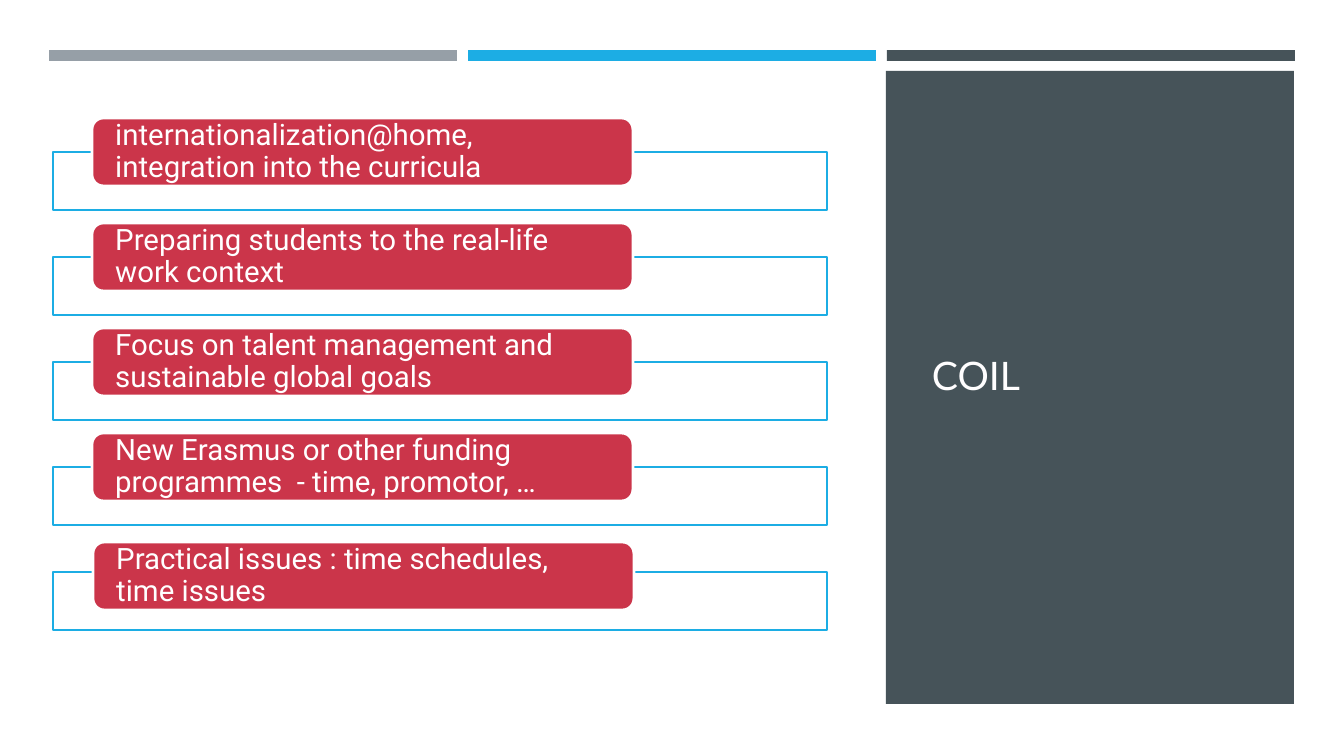
from pptx import Presentation
from pptx import util as u
from pptx.dml.color import RGBColor
from pptx.enum import shapes, text
from pptx.oxml import xmlchemy
from lxml import etree

PX = u.Inches(13.3333) / 1344
THEME = {
    "white": "FFFFFF", "title_white": "FFFEFF", "slate": "465359",
    "grey": "969FA7", "blue": "1CADE4", "red": "CB354A",
    "title": ("Lato", 28), "body": ("Roboto", 21),
}
KIND = shapes.MSO_SHAPE


def add_block(kind, box, fill, line=None, width=0):
    """Draw a filled shape; box is left, top, width, height in px."""
    block = page.shapes.add_shape(kind, *[round(n * PX) for n in box])
    block.shadow.inherit = False
    block.fill.solid()
    block.fill.fore_color.rgb = RGBColor.from_string(THEME[fill])
    if line:
        block.line.color.rgb = RGBColor.from_string(THEME[line])
        block.line.width = u.Pt(width)
    else:
        block.line.fill.background()
    return block


def write(shape, words, style, color, inset_x, inset_y, spacing):
    frame = shape.text_frame
    layout = {
        "word_wrap": True, "vertical_anchor": text.MSO_ANCHOR.MIDDLE,
        "margin_left": round(inset_x * PX), "margin_right": round(inset_x * PX),
        "margin_top": round(inset_y * PX), "margin_bottom": round(inset_y * PX),
    }
    for name, value in layout.items():
        setattr(frame, name, value)
    para = frame.paragraphs[0]
    para.alignment = text.PP_ALIGN.LEFT
    para.line_spacing = spacing
    span = para.add_run()
    span.text = words
    family, size = THEME[style]
    span.font.name, span.font.size = family, u.Pt(size)
    span.font.color.rgb = RGBColor.from_string(THEME[color])


deck = Presentation()
deck.slide_width, deck.slide_height = round(1344 * PX), round(756 * PX)
page = deck.slides.add_slide(deck.slide_layouts[6])

# Header bars and title panel
for column, color in enumerate(["grey", "blue", "slate"]):
    add_block(KIND.RECTANGLE, (49 + 419 * column, 50, 408, 11), color)
add_block(KIND.RECTANGLE, (886, 71, 408, 633), "slate")
title = page.shapes.add_textbox(*[round(n * PX) for n in (922, 115, 332, 519)])
write(title, "COIL", "title", "title_white", 10, 5, 1.0)

# Topics: an outlined frame with a red label over its top edge
topics = [
    "internationalization@home, integration into the curricula",
    "Preparing students to the real-life work context",
    "Focus on talent management and sustainable global goals",
    "New Erasmus or other funding programmes  - time, promotor, …",
    "Practical issues : time schedules, time issues",
]
PITCH = 105
for row, topic in enumerate(topics):
    frame = add_block(KIND.RECTANGLE, (53, 152 + PITCH * row, 774, 58),
                      "white", "blue", 1.75)
    tint = frame.fill.fore_color._xFill.find(".//{*}srgbClr")
    etree.SubElement(tint, tint.tag.replace("srgbClr", "alpha"), val="90000")

    # The last label sits slightly lower and to the right
    dx, dy = (1, 4) if topic == topics[-1] else (0, 0)
    label = add_block(KIND.ROUNDED_RECTANGLE,
                      (92 + dx, 118 + PITCH * row + dy, 541, 68),
                      "red", "white", 2)
    write(label, topic, "body", "white", 20, 0, 0.9)

deck.save("out.pptx")
